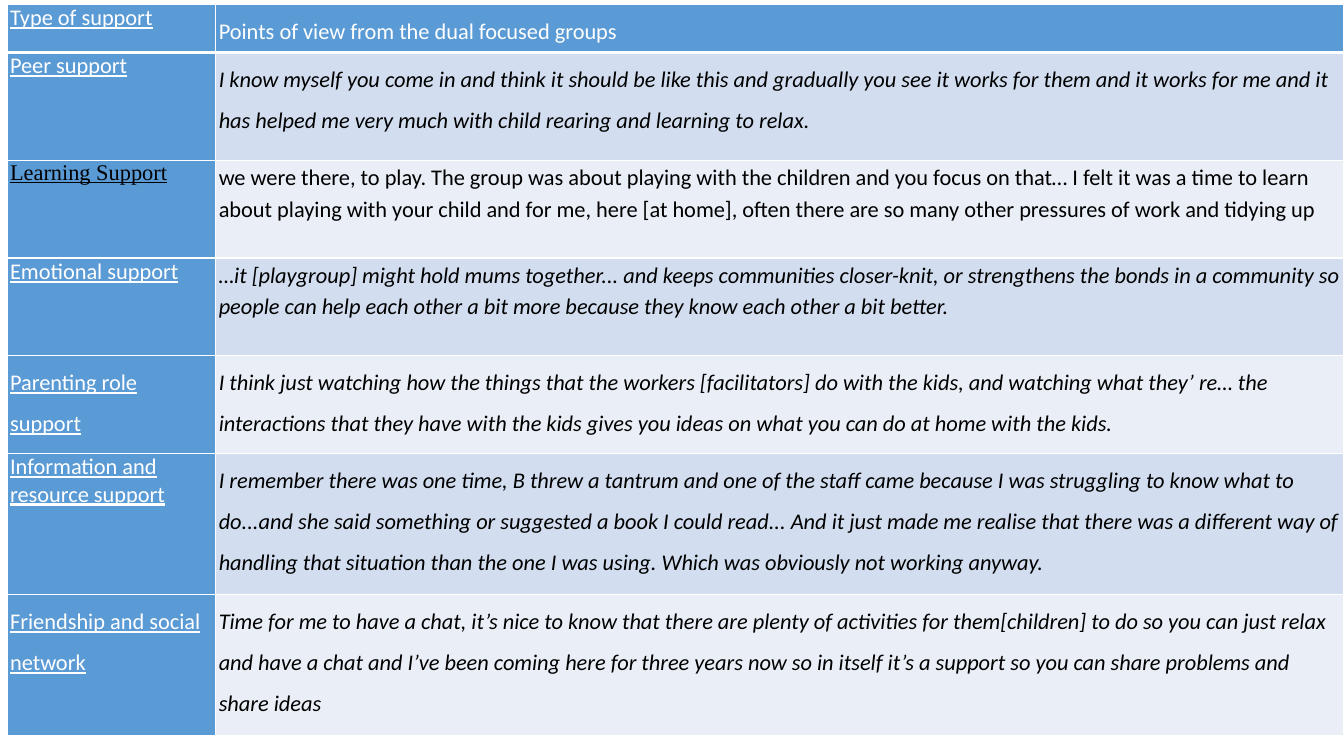
import pptx
import pptx.util
import pptx.dml.color
import pptx.oxml.ns
from lxml import etree

Inches, Pt = pptx.util.Inches, pptx.util.Pt

# Content: label, its line spacing, quote, its line spacing, row height
HEAD = ("Type of support", None, "Points of view from the dual focused groups", 1.5, 0.48)
ROWS = [
    HEAD,
    ("Peer support", None,
     "I know myself you come in and think it should be like this and gradually you see "
     "it works for them and it works for me and it has helped me very much with child "
     "rearing and learning to relax.", 1.5, 1.07),
    ("Learning Support", None,
     "we were there, to play. The group was about playing with the children and you focus "
     "on that… I felt it was a time to learn about playing with your child and for me, "
     "here [at home], often there are so many other pressures of work and tidying up",
     1.15, 0.97),
    ("Emotional support", None,
     "…it [playgroup] might hold mums together... and keeps communities closer-knit, or "
     "strengthens the bonds in a community so people can help each other a bit more "
     "because they know each other a bit better.", 1.15, 0.97),
    ("Parenting role support", 1.5,
     "I think just watching how the things that the workers [facilitators] do with the "
     "kids, and watching what they’ re… the interactions that they have with the kids "
     "gives you ideas on what you can do at home with the kids.", 1.5, 0.97),
    ("Information and resource support", None,
     "I remember there was one time, B threw a tantrum and one of the staff came because "
     "I was struggling to know what to do...and she said something or suggested a book I "
     "could read... And it just made me realise that there was a different way of "
     "handling that situation than the one I was using. Which was obviously not working "
     "anyway.", 1.5, 1.4),
    ("Friendship and social network", 1.5,
     "Time for me to have a chat, it’s nice to know that there are plenty of activities "
     "for them[children] to do so you can just relax and have a chat and I’ve been coming "
     "here for three years now so in itself it’s a support so you can share problems and "
     "share ideas", 1.5, 1.4),
]
PLAIN = "Learning Support"  # upright quote, black serif label
WIDTHS = (2.07, 11.19)
BLUE, BANDS = "5B9BD5", ("EAEFF7", "D2DEEF")
WHITE, BLACK = "FFFFFF", "000000"


def color(code):
    return pptx.dml.color.RGBColor.from_string(code)


def border(cell, base):
    props = cell._tc.get_or_add_tcPr()
    qn = pptx.oxml.ns.qn
    for side, width in (("L", 1), ("R", 1), ("T", 1), ("B", base)):
        line = etree.SubElement(props, qn("a:ln" + side), w=str(Pt(width)))
        fill = etree.SubElement(line, qn("a:solidFill"))
        etree.SubElement(fill, qn("a:srgbClr"), val=WHITE)


def write(cell, text, space, ink, fill, base, face="Calibri", under=False, slant=False):
    border(cell, base)
    cell.fill.solid()
    cell.fill.fore_color.rgb = color(fill)
    cell.margin_left = cell.margin_right = Inches(0.03)
    cell.margin_top = cell.margin_bottom = 0
    para = cell.text_frame.paragraphs[0]
    if space:
        para.line_spacing = space
    else:
        para.space_after = Pt(6)
    run = para.add_run()
    run.text = text
    font = run.font
    font.name, font.size, font.bold = face, Pt(16), False
    font.underline, font.italic = under, slant
    font.color.rgb = color(ink)


# Slide
deck = pptx.Presentation()
deck.slide_width, deck.slide_height = Inches(13.33), Inches(7.5)
slide = deck.slides.add_slide(deck.slide_layouts[6])

# Table
high = sum(row[-1] for row in ROWS)
table = slide.shapes.add_table(len(ROWS), 2, Inches(0.07), Inches(0.04),
                               Inches(sum(WIDTHS)), Inches(high)).table
for col, width in zip(table.columns, WIDTHS):
    col.width = Inches(width)

# Cells
for i, (label, gap, quote, space, height) in enumerate(ROWS):
    table.rows[i].height = Inches(height)
    top, plain = i == 0, label == PLAIN
    base = 3 if top else 1
    write(table.cell(i, 0), label, gap, BLACK if plain else WHITE, BLUE, base,
          face="Times New Roman" if plain else "Calibri", under=True)
    write(table.cell(i, 1), quote, space, WHITE if top else BLACK,
          BLUE if top else BANDS[i % 2], base, slant=not (top or plain))

deck.save("out.pptx")
